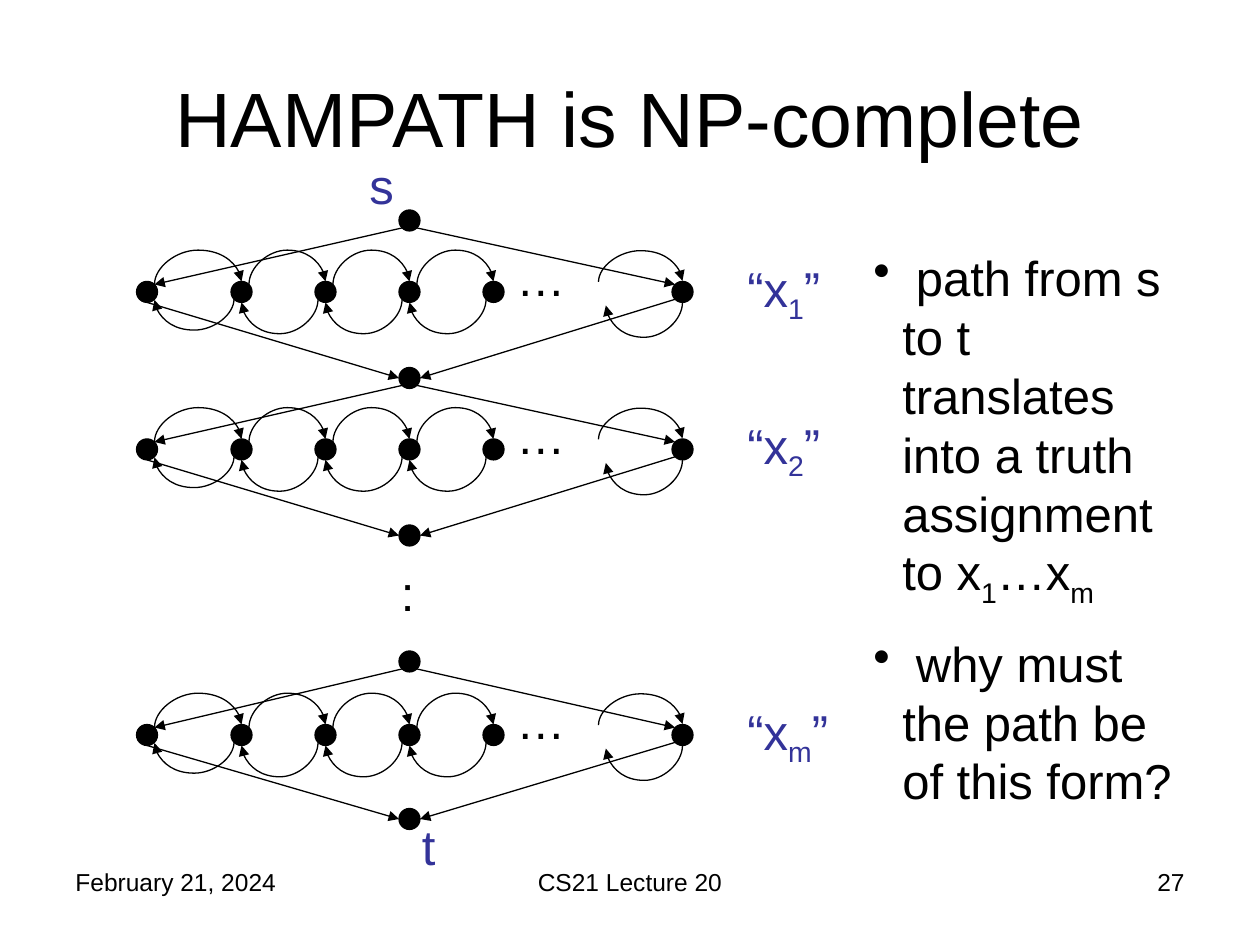
from lxml import etree
from pptx import Presentation
from pptx.dml.color import RGBColor
from pptx.enum.shapes import MSO_CONNECTOR, MSO_SHAPE
from pptx.enum.text import MSO_ANCHOR, PP_ALIGN
from pptx.oxml.ns import qn
from pptx.util import Inches, Pt

STRAIGHT, CURVE = MSO_CONNECTOR.STRAIGHT, MSO_CONNECTOR.CURVE
ELLIPSE = MSO_SHAPE.OVAL
LEFT, CENTER, RIGHT = PP_ALIGN.LEFT, PP_ALIGN.CENTER, PP_ALIGN.RIGHT
MIDDLE = MSO_ANCHOR.MIDDLE
COLORS = {"ink": "000000", "label": "333399"}
FONT = "Arial"

# The slide is a grid of 120 columns by 90 rows; a node has a radius of one cell
CELL = Inches(10) // 120
DIAGONAL = 0.71  # offset of a point on the node's rim at 45 degrees
LOOP_HEIGHT = 3

presentation = Presentation()
presentation.slide_width, presentation.slide_height = 120 * CELL, 90 * CELL
slide = presentation.slides.add_slide(presentation.slide_layouts[5])
shapes = slide.shapes


def add_text(column, row, columns, rows, lines, size=28, color="ink",
             align=LEFT, space=14, bullet=False):
    """Add a text box; parts between underscores are subscripts."""
    box = shapes.add_textbox(*(int(n * CELL) for n in (column, row, columns, rows)))
    frame = box.text_frame
    frame.word_wrap = True
    for index, line in enumerate(lines):
        paragraph = frame.paragraphs[0] if index == 0 else frame.add_paragraph()
        paragraph.alignment = align
        paragraph.space_before = Pt(space)
        if bullet:
            properties = paragraph._p.get_or_add_pPr()
            properties.set("marL", str(Inches(0.23)))
            properties.set("indent", str(-Inches(0.23)))
            etree.SubElement(properties, qn("a:buChar"), char="•")
        paragraph.font.name, paragraph.font.size = FONT, Pt(size)
        paragraph.font.color.rgb = RGBColor.from_string(COLORS[color])
        for part, text in enumerate(line.split("_")):
            run = paragraph.add_run()
            run.text = text
            if part % 2:
                run._r.get_or_add_rPr().set("baseline", "-25000")


def add_arrow(x1, y1, x2, y2, loop=False):
    """Add an arrow; a loop bulges up going right and down going left."""
    if loop:
        # An upright S-curve, turned a quarter about its centre
        width, height = max(abs(y2 - y1), 0.1), abs(x2 - x1)
        left, top = (x1 + x2 - width) / 2, (y1 + y2 - height) / 2
        ends = left, top, left + width, top + height
    else:
        ends = x1, y1, x2, y2
    arrow = shapes.add_connector(CURVE if loop else STRAIGHT,
                                 *(int(n * CELL) for n in ends))
    arrow.line.width = Pt(0.75)
    arrow.line.color.rgb = RGBColor.from_string(COLORS["ink"])
    properties = arrow._element.spPr
    etree.SubElement(properties.find(qn("a:ln")), qn("a:tailEnd"), type="triangle")
    etree.SubElement(properties, qn("a:effectLst"))
    if loop:
        turn = 270 if x2 > x1 else 90
        properties.find(qn("a:xfrm")).set("rot", str(turn * 60000))
        bulge = (abs(y2 - y1) + LOOP_HEIGHT) / width
        guides = properties.find(qn("a:prstGeom")).find(qn("a:avLst"))
        etree.SubElement(guides, qn("a:gd"), name="adj1",
                         fmla=f"val {round(bulge * 100000)}")


# Footer
for column, columns, text, align in [(6, 28, "February 21, 2024", LEFT),
                                     (41, 38, "CS21 Lecture 20", CENTER),
                                     (86, 28, "27", RIGHT)]:
    add_text(column, 82, columns, 6.25, [text], 14, align=align, space=0)

# Title
title = shapes.title
title.left, title.top = 6 * CELL, int(3.6 * CELL)
title.width, title.height = 108 * CELL, 15 * CELL
title.text_frame.text = "HAMPATH is NP-complete"
title.text_frame.vertical_anchor = MIDDLE
paragraph = title.text_frame.paragraphs[0]
paragraph.alignment = CENTER
paragraph.font.name, paragraph.font.size = FONT, Pt(44)
paragraph.font.color.rgb = RGBColor.from_string(COLORS["ink"])

# Nodes: (apex row, chain row, bottom row, subscript) for each variable
gadgets = [(21, 27.8, 36, "1"), (36, 42.8, 51, "2"), (63, 70, 78, "m")]
chain = [14, 23, 31, 39, 47]
first, middle, last = 14, 39, 65
nodes = [(middle, row) for row in (21, 36, 51, 63, 78)]
nodes += [(x, row) for _, row, _, _ in gadgets for x in chain + [last]]
for x, y in nodes:
    node = shapes.add_shape(ELLIPSE, int((x - 1) * CELL), int((y - 1) * CELL),
                            2 * CELL, 2 * CELL)
    node.shadow.inherit = False
    node.fill.solid()
    node.fill.fore_color.rgb = RGBColor.from_string(COLORS["ink"])
    node.line.color.rgb = RGBColor.from_string(COLORS["ink"])
    node.line.width = Pt(0.75)

for apex, row, bottom, subscript in gadgets:
    above, below = row - DIAGONAL, row + DIAGONAL
    # Edges from the apex and to the bottom node
    add_arrow(middle - DIAGONAL, apex + DIAGONAL, first + DIAGONAL, above)
    add_arrow(middle + DIAGONAL, apex + DIAGONAL, last - DIAGONAL, above)
    add_arrow(first, row + 1, middle - 1, bottom)
    add_arrow(last - DIAGONAL, below, middle + 1, bottom)
    # Loops both ways between neighbours in the chain
    for x, following in zip(chain, chain[1:]):
        add_arrow(x + DIAGONAL, above, following, row - 1, loop=True)
        end = (x + DIAGONAL, below) if x == first else (x, row + 1)
        add_arrow(following - DIAGONAL, below, *end, loop=True)
    add_arrow(57, row - 1, last, row - 1, loop=True)
    add_arrow(last, row + 1, 57.7, row + 1.3, loop=True)
    # Ellipsis and variable name
    add_text(48, row - 4.8, 9, 6.8, ["…"])
    add_text(70, row - 3.8, 12, 6.8, [f"“x_{subscript}_”"], color="label")

# Vertical dots, start and end labels
add_text(37, 53, 5, 6.8, [":"])
add_text(34, 14.2, 7, 6.8, ["s"], color="label")
add_text(39, 77.2, 7, 6.8, ["t"], color="label")

# Remarks
add_text(82, 23, 31, 48.8,
         [" path from s to t translates into a truth assignment to x_1_…x_m_",
          " why must the path be of this form?"], bullet=True)

presentation.save("out.pptx")
